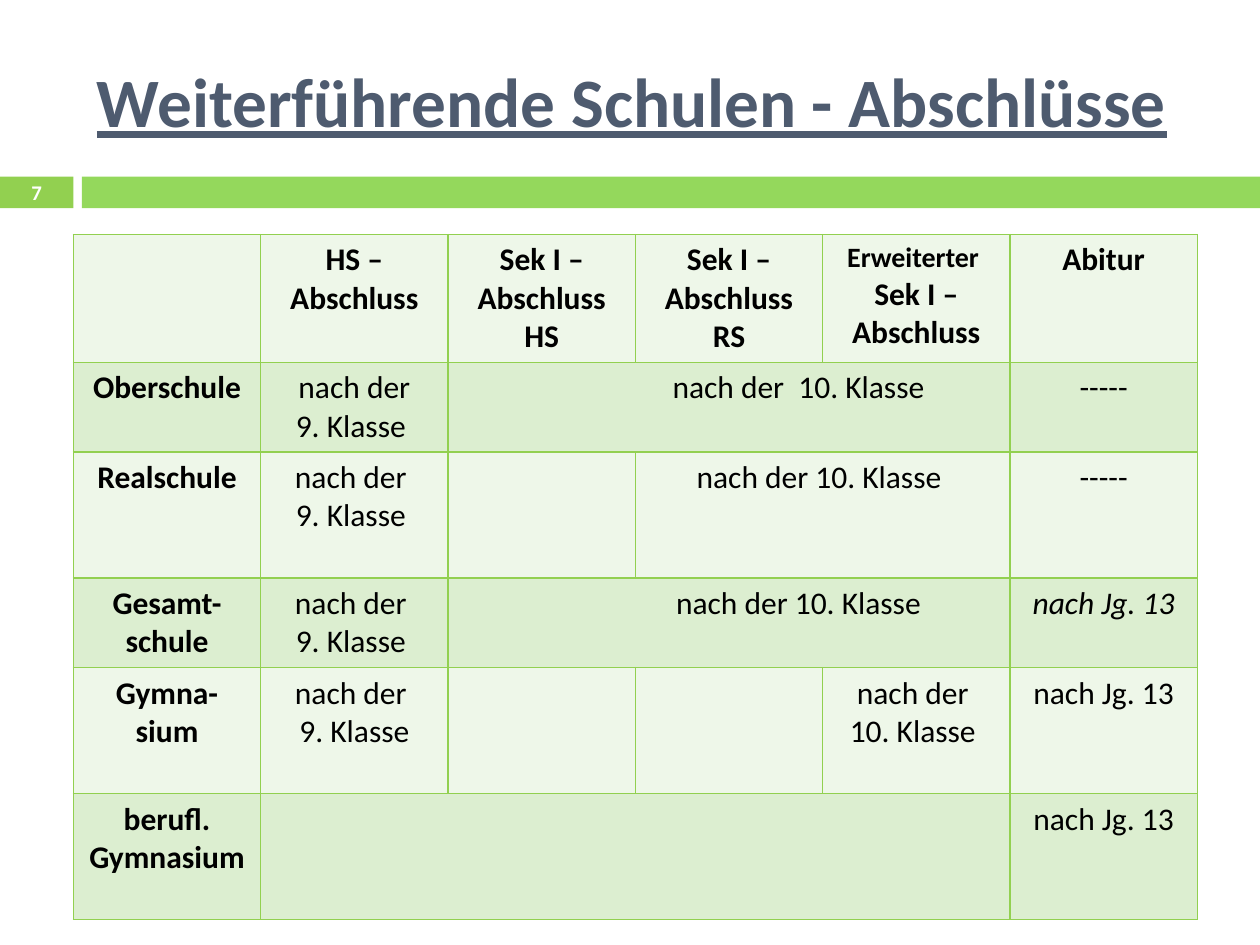
from lxml.etree import SubElement
from pptx import Presentation
from pptx.dml.color import RGBColor
from pptx.enum.shapes import MSO_SHAPE
from pptx.enum.text import MSO_ANCHOR, PP_ALIGN
from pptx.oxml.ns import qn
from pptx.util import Cm, Pt

GREEN = RGBColor(0x92, 0xD0, 0x50)
BAR_GREEN = RGBColor(0x94, 0xD8, 0x5C)
LIGHT = RGBColor(0xEE, 0xF7, 0xE9)
MEDIUM = RGBColor(0xDC, 0xEE, 0xD0)
SLATE = RGBColor(0x4E, 0x5B, 0x6F)
WHITE = RGBColor(0xFF, 0xFF, 0xFF)
BLACK = RGBColor(0x00, 0x00, 0x00)

ROWS = [
    ["", "HS – Abschluss", "Sek I – Abschluss HS", "Sek I – Abschluss RS",
     "Erweiterter \nSek I – Abschluss", "Abitur"],
    ["Oberschule", "nach der\n9. Klasse ", "nach der  10. Klasse ", "", "", "-----"],
    ["Realschule", "nach der \n9. Klasse ", "", "nach der 10. Klasse ", "", "-----"],
    ["Gesamt-schule", "nach der \n9. Klasse ", "nach der 10. Klasse ", "", "", "nach Jg. 13"],
    ["Gymna-sium", "nach der \n9. Klasse", "", "", "nach der \n10. Klasse ", "nach Jg. 13"],
    ["berufl. Gymnasium", "", "", "", "", "nach Jg. 13"],
]
ROW_HEIGHTS = [2.46, 1.78, 2.54, 1.78, 2.54, 2.54]
MERGES = [(1, 2, 4), (2, 3, 4), (3, 2, 4), (5, 1, 4)]
INDENTED = [(1, 2), (3, 2)]


def write(tf, text, size=18, color=BLACK, bold=False, italic=False,
          underline=False, align=PP_ALIGN.CENTER):
    for i, line in enumerate(text.split("\n")):
        p = tf.paragraphs[0] if i == 0 else tf.add_paragraph()
        p.alignment = align
        r = p.add_run()
        r.text = line
        r.font.name = "Calibri"
        r.font.size = Pt(size)
        r.font.color.rgb = color
        r.font.bold = bold
        r.font.italic = italic
        r.font.underline = underline


class SlideBuilder:
    def __init__(self, prs):
        self.s = prs.slides.add_slide(prs.slide_layouts[5])

    def title(self, text, left, top, width, height):
        sp = self.s.shapes.title
        sp.left, sp.top, sp.width, sp.height = Cm(left), Cm(top), Cm(width), Cm(height)
        sp.text_frame.vertical_anchor = MSO_ANCHOR.MIDDLE
        write(sp.text_frame, text, size=39.6, color=SLATE, bold=True,
              underline=True, align=PP_ALIGN.LEFT)

    def bar(self, left, top, width, height, color):
        sp = self.s.shapes.add_shape(MSO_SHAPE.RECTANGLE, Cm(left), Cm(top),
                                     Cm(width), Cm(height))
        sp.shadow.inherit = False
        sp.fill.solid()
        sp.fill.fore_color.rgb = color
        sp.line.fill.background()

    def page_number(self, text, left, top, width, height):
        tf = self.s.shapes.add_textbox(Cm(left), Cm(top), Cm(width), Cm(height)).text_frame
        tf.word_wrap = True
        tf.vertical_anchor = MSO_ANCHOR.MIDDLE
        tf.margin_top = tf.margin_bottom = 0
        write(tf, text, size=11.9, color=WHITE, bold=True)

    def borders(self, cell):
        tcPr = cell._tc.get_or_add_tcPr()
        for i, side in enumerate(("lnL", "lnR", "lnT", "lnB")):
            ln = tcPr.makeelement(qn(f"a:{side}"), {"w": str(Pt(1))})
            fill = SubElement(ln, qn("a:solidFill"))
            SubElement(fill, qn("a:srgbClr"), val=str(GREEN))
            tcPr.insert(i, ln)

    def table(self, left, top, width):
        cols = len(ROWS[0])
        tbl = self.s.shapes.add_table(len(ROWS), cols, Cm(left), Cm(top),
                                      Cm(width), Cm(sum(ROW_HEIGHTS))).table
        tbl.first_row = tbl.horz_banding = False
        for col in tbl.columns:
            col.width = Cm(width / cols)
        for row, height in zip(tbl.rows, ROW_HEIGHTS):
            row.height = Cm(height)
        for r, first, last in MERGES:
            tbl.cell(r, first).merge(tbl.cell(r, last))
        for r, texts in enumerate(ROWS):
            for c, text in enumerate(texts):
                cell = tbl.cell(r, c)
                cell.fill.solid()
                cell.fill.fore_color.rgb = MEDIUM if r % 2 else LIGHT
                self.borders(cell)
                if text:
                    write(cell.text_frame, text, bold=r == 0 or c == 0,
                          italic=(r, c) == (3, 5))
        for r, c in INDENTED:
            tbl.cell(r, c).margin_left = Cm(3.2)
        tbl.cell(0, 4).text_frame.paragraphs[0].runs[0].font.size = Pt(16)


def main():
    prs = Presentation()
    prs.slide_width, prs.slide_height = Cm(25.4), Cm(19.05)
    s = SlideBuilder(prs)
    s.bar(0, 3.56, 1.48, 0.64, GREEN)
    s.bar(1.65, 3.56, 23.75, 0.64, BAR_GREEN)
    s.title("Weiterführende Schulen - Abschlüsse", 1.7, 0.64, 22.66, 2.74)
    s.table(1.48, 4.73, 22.66)
    s.page_number("7", 0, 3.54, 1.48, 0.68)
    prs.save("out.pptx")


if __name__ == "__main__":
    main()
